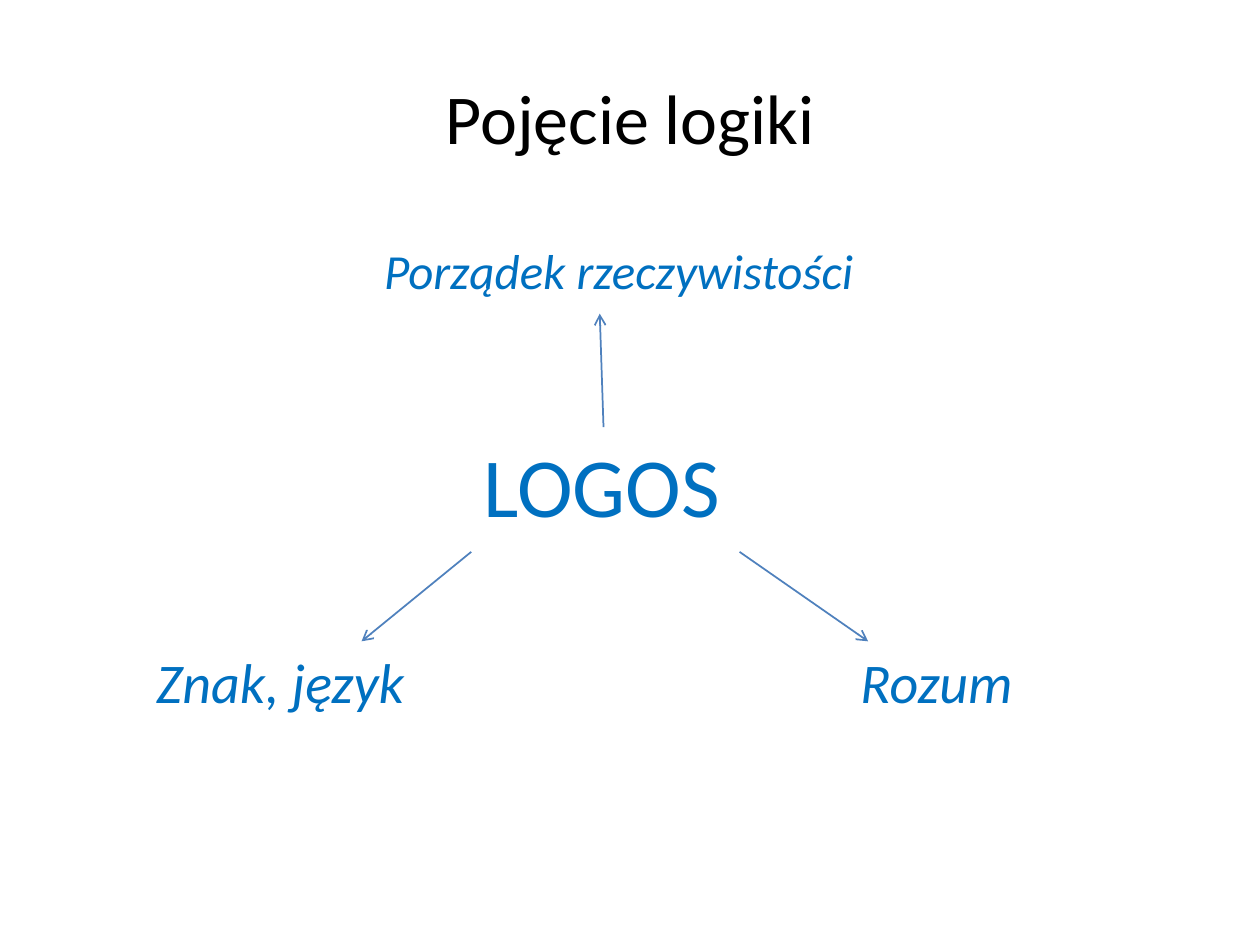
import pptx
import pptx.util
import pptx.dml.color
import pptx.enum.shapes
import pptx.enum.text
import pptx.oxml.ns
from lxml import etree

Inches = pptx.util.Inches
Pt = pptx.util.Pt
qn = pptx.oxml.ns.qn
FONT = "Calibri"
COLORS = {"title": "000000", "term": "0070C0", "arrow": "4F81BD"}


def rgb(name):
    return pptx.dml.color.RGBColor.from_string(COLORS[name])


def add_text(slide, text, area, size, color, italic=False):
    box = slide.shapes.add_textbox(*map(Inches, area))
    para = box.text_frame.paragraphs[0]
    para.text = text
    para.font.name = FONT
    para.font.size = Pt(size)
    para.font.italic = italic
    para.font.color.rgb = rgb(color)
    return box.text_frame


def add_title(slide, text):
    frame = add_text(slide, text, (0.5, 0.3, 9, 1.25), 40, "title")
    frame.word_wrap = True
    frame.vertical_anchor = pptx.enum.text.MSO_ANCHOR.MIDDLE
    frame.paragraphs[0].alignment = pptx.enum.text.PP_ALIGN.CENTER


def add_term(slide, text, area, size, italic=True):
    """Add a label whose box fits its single line."""
    frame = add_text(slide, text, area, size, "term", italic)
    frame.word_wrap = False
    frame.auto_size = pptx.enum.text.MSO_AUTO_SIZE.SHAPE_TO_FIT_TEXT


def add_arrow(slide, start, end):
    kind = pptx.enum.shapes.MSO_CONNECTOR.STRAIGHT
    arrow = slide.shapes.add_connector(kind, *map(Inches, start + end))
    arrow.line.color.rgb = rgb("arrow")
    arrow.line.width = Pt(1)
    props = arrow.element.spPr
    etree.SubElement(props.find(qn("a:ln")), qn("a:tailEnd"), type="arrow")
    etree.SubElement(props, qn("a:effectLst"))


def main():
    deck = pptx.Presentation()
    deck.slide_width, deck.slide_height = Inches(10), Inches(7.5)
    slide = deck.slides.add_slide(deck.slide_layouts[6])

    add_title(slide, "Pojęcie logiki")
    add_term(slide, "LOGOS", (3.74, 3.39, 2.09, 0.91), 48, italic=False)
    add_term(slide, "Znak, język", (1.14, 5.09, 2.19, 0.64), 32)
    add_term(slide, "Rozum", (6.73, 5.09, 1.42, 0.64), 32)
    add_term(slide, "Porządek rzeczywistości", (2.95, 1.86, 3.96, 0.57), 28)

    add_arrow(slide, (3.74, 4.38), (2.87, 5.09))
    add_arrow(slide, (5.87, 4.38), (6.89, 5.09))
    add_arrow(slide, (4.79, 3.39), (4.76, 2.49))
    deck.save("out.pptx")


if __name__ == "__main__":
    main()
